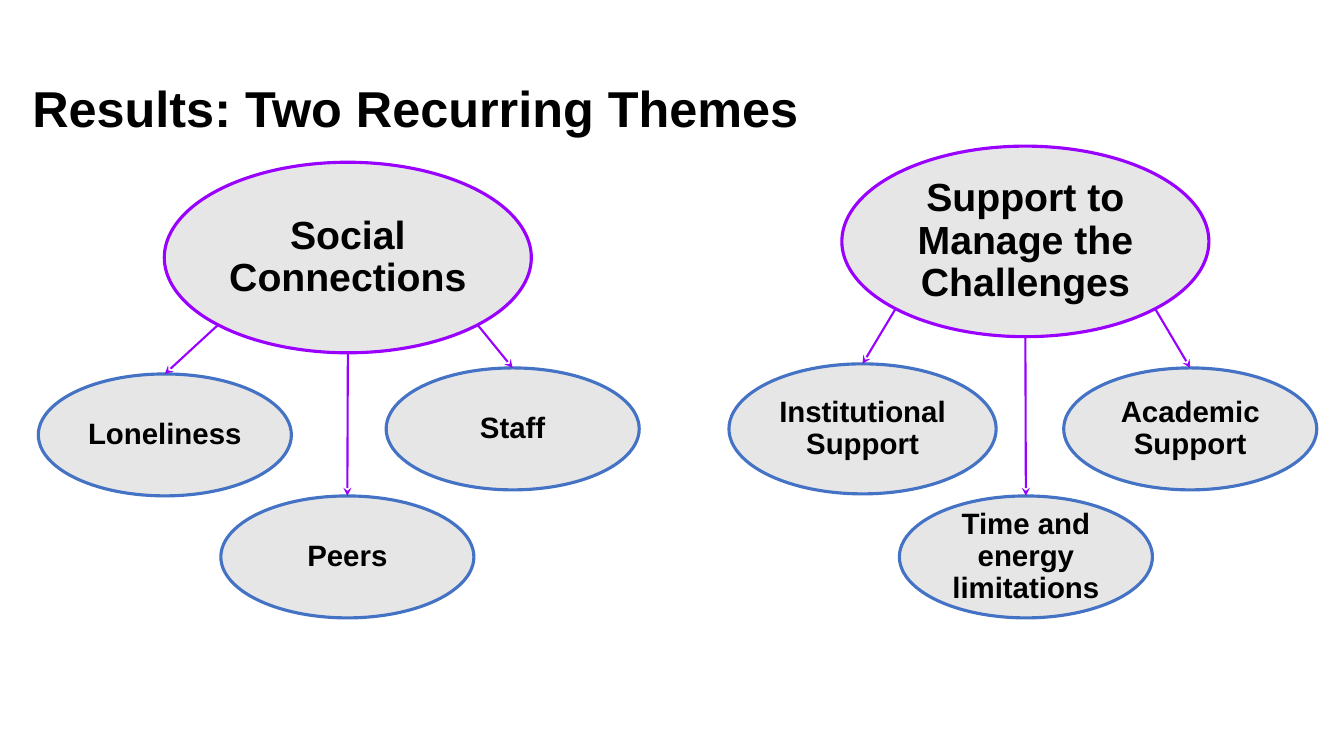
from math import cos, pi, sin

from lxml import etree
from pptx import Presentation
from pptx.dml.color import RGBColor
from pptx.enum.shapes import MSO_CONNECTOR, MSO_SHAPE
from pptx.enum.text import MSO_ANCHOR, MSO_AUTO_SIZE, PP_ALIGN
from pptx.oxml.ns import qn
from pptx.util import Pt

PX = 9144  # 100 px to the inch
FONT = "Arial"
COLORS = {"text": "000000", "fill": "E7E6E6", "theme": "9900FF", "topic": "4472C4"}
ELLIPSE = MSO_SHAPE.OVAL
STRAIGHT = MSO_CONNECTOR.STRAIGHT
MIDDLE = MSO_ANCHOR.MIDDLE
CENTER, LEFT = PP_ALIGN.CENTER, PP_ALIGN.LEFT
NO_AUTOFIT = MSO_AUTO_SIZE.NONE

TITLE_ONLY = 5
THEME_SIZE = (364, 189)
TOPIC_SIZE = (251, 121)
EXIT_ANGLES = (135, 90, 45)  # left, bottom and right of the theme ellipse

# Each cluster: corner, theme (text, left), topics (text, left, top, size)
CLUSTERS = [
    ((38, 161), ("Social Connections", 125), [
        ("Loneliness", 0, 210, TOPIC_SIZE),
        ("Peers", 181, 331, TOPIC_SIZE),
        ("Staff", 345, 204, TOPIC_SIZE),
    ]),
    ((723, 145), ("Support to Manage the Challenges", 112), [
        ("Institutional Support", 0, 216, (265, 129)),
        ("Time and energy limitations", 169, 347, TOPIC_SIZE),
        ("Academic Support", 332, 220, TOPIC_SIZE),
    ]),
]


def color(name):
    return RGBColor.from_string(COLORS[name])


def px(*lengths):
    return [round(length * PX) for length in lengths]


def write_text(shape, text, size, alignment):
    frame = shape.text_frame
    frame.text = text
    frame.word_wrap = True
    frame.auto_size = NO_AUTOFIT
    frame.vertical_anchor = MIDDLE
    paragraph = frame.paragraphs[0]
    paragraph.alignment = alignment
    paragraph.line_spacing = 0.9
    font = paragraph.runs[0].font
    font.name, font.size, font.bold = FONT, Pt(size), True
    font.color.rgb = color("text")


def add_title(slide, text, box):
    title = slide.shapes.title
    title.left, title.top, title.width, title.height = px(*box)
    write_text(title, text, 36, LEFT)


def add_ellipse(slide, text, box, line_color, size):
    shape = slide.shapes.add_shape(ELLIPSE, *px(*box))
    shape.shadow.inherit = False
    shape.fill.solid()
    shape.fill.fore_color.rgb = color("fill")
    shape.line.color.rgb = color(line_color)
    shape.line.width = Pt(2.25)
    write_text(shape, text, size, CENTER)
    frame = shape.text_frame
    frame.margin_left, frame.margin_top, frame.margin_right, frame.margin_bottom = px(10, 10, 10, 10)


def add_arrow(slide, start, end):
    connector = slide.shapes.add_connector(STRAIGHT, *px(*start, *end))
    connector.line.color.rgb = color("theme")
    connector.line.width = Pt(1.5)
    line = connector.line._get_or_add_ln()
    etree.SubElement(line, qn("a:tailEnd"), type="stealth")
    etree.SubElement(connector._element.spPr, qn("a:effectLst"))


def add_cluster(slide, corner, theme, topics):
    left, top = corner
    width, height = THEME_SIZE
    theme_text, theme_left = theme

    # Theme with its topics
    add_ellipse(slide, theme_text, (left + theme_left, top, width, height), "theme", 28)
    for text, topic_left, topic_top, size in topics:
        add_ellipse(slide, text, (left + topic_left, top + topic_top, *size), "topic", 21)

    # Arrows from the theme's rim to the top of each topic
    center_x, center_y = left + theme_left + width / 2, top + height / 2
    for degrees, (_, topic_left, topic_top, size) in zip(EXIT_ANGLES, topics):
        angle = degrees * pi / 180
        start = (center_x + width / 2 * cos(angle), center_y + height / 2 * sin(angle))
        add_arrow(slide, start, (left + topic_left + size[0] / 2, top + topic_top))


def main():
    presentation = Presentation()
    presentation.slide_width, presentation.slide_height = px(1333, 750)
    slide = presentation.slides.add_slide(presentation.slide_layouts[TITLE_ONLY])
    add_title(slide, "Results: Two Recurring Themes", (22, 59, 1128, 102))
    for corner, theme, topics in CLUSTERS:
        add_cluster(slide, corner, theme, topics)
    presentation.save("out.pptx")


if __name__ == "__main__":
    main()
